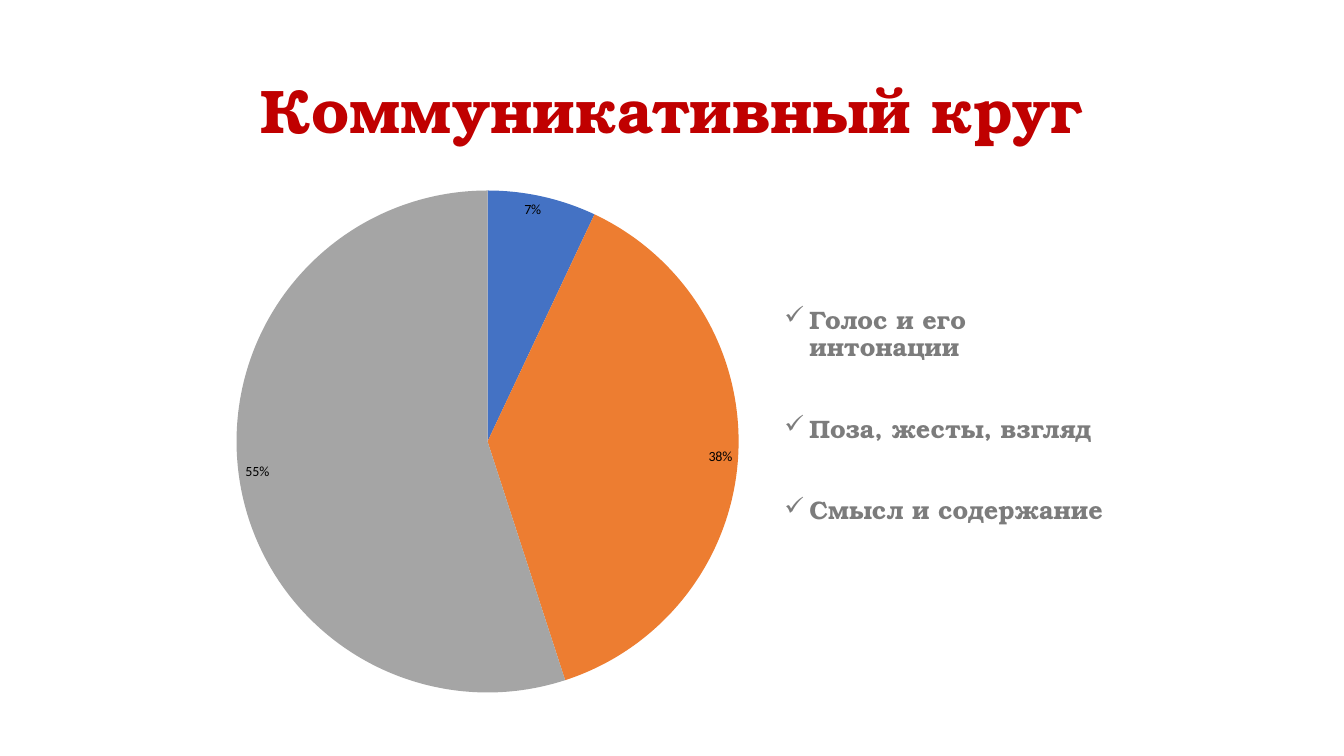
from lxml import etree
from pptx import Presentation
from pptx.chart.data import CategoryChartData
from pptx.dml.color import RGBColor
from pptx.enum import chart as ch, text
from pptx.oxml import ns, parse_xml
from pptx.util import Inches, Pt

COLORS = {"title": "C00000", "body": "7C7C7C", "label": "000000",
          "words": "4472C4", "voice": "ED7D31", "gesture": "A5A5A5"}
SERIF = "TeX Gyre Bonum"
POINTS = ["Голос и его интонации", "Поза, жесты, взгляд", "Смысл и содержание"]
SHARES = {"1": (0.07, "words"), "2": (0.38, "voice"), "3": (0.55, "gesture")}


def rgb(name):
    """Return the named palette colour."""
    return RGBColor.from_string(COLORS[name])


def set_bullet(p, char, indent):
    """Give a paragraph a hanging bullet."""
    pPr = p._p.get_or_add_pPr()
    pPr.set("marL", str(indent))
    pPr.set("indent", str(-indent))
    etree.SubElement(pPr, ns.qn("a:buChar")).set("char", char)


def add_text(s, lines, box, size, color, align=text.PP_ALIGN.LEFT,
             anchor=text.MSO_ANCHOR.TOP, gap=0, bullet=None):
    """Add a text box with one bold paragraph per line."""
    tf = s.shapes.add_textbox(*map(Inches, box)).text_frame
    tf.word_wrap = True
    tf.vertical_anchor = anchor
    for i, line in enumerate(lines):
        p = tf.add_paragraph() if i else tf.paragraphs[0]
        p.alignment = align
        p.line_spacing = 0.9
        p.space_before = Pt(gap if i else 0)
        if bullet:
            set_bullet(p, bullet, Inches(0.25))
        r = p.add_run()
        r.text = line
        r.font.name, r.font.size, r.font.bold = SERIF, Pt(size), True
        r.font.color.rgb = rgb(color)


def set_plot_area(chart, x, y, w, h):
    """Fix the inner plot area as fractions of the chart frame."""
    area = chart._chartSpace.chart.plotArea
    for old in area.findall(ns.qn("c:layout")):
        area.remove(old)
    area.insert(0, parse_xml(
        f'<c:layout {ns.nsdecls("c")}><c:manualLayout><c:layoutTarget val="inner"/>'
        '<c:xMode val="edge"/><c:yMode val="edge"/>'
        f'<c:x val="{x}"/><c:y val="{y}"/><c:w val="{w}"/><c:h val="{h}"/>'
        '</c:manualLayout></c:layout>'))


def add_pie(s, shares, box):
    """Add a pie chart with percentage labels inside its edge."""
    data = CategoryChartData(number_format="0%")
    data.categories = list(shares)
    data.add_series("Series 1", [value for value, _ in shares.values()])
    chart = s.shapes.add_chart(ch.XL_CHART_TYPE.PIE, *map(Inches, box), data).chart
    chart.has_legend = chart.has_title = False
    chart.font.name, chart.font.size = "Calibri", Pt(10)
    chart.font.color.rgb = rgb("label")
    set_plot_area(chart, 0.03, 0.07, 0.95, 0.85)
    plot = chart.plots[0]
    plot.vary_by_categories = True
    plot.has_data_labels = True
    labels = plot.data_labels
    labels.show_value, labels.show_percentage = True, False
    labels.number_format, labels.number_format_is_linked = "0%", False
    labels.position = ch.XL_LABEL_POSITION.INSIDE_END
    for i, (_, color) in enumerate(shares.values()):
        fill = plot.series[0].points[i].format.fill
        fill.solid()
        fill.fore_color.rgb = rgb(color)


def main():
    """Build the communication circle slide."""
    prs = Presentation()
    prs.slide_width, prs.slide_height = Inches(13.33), Inches(7.5)
    s = prs.slides.add_slide(prs.slide_layouts[6])
    add_text(s, ["Коммуникативный круг"], (0.92, 0.4, 11.5, 1.45), 44, "title",
             align=text.PP_ALIGN.CENTER, anchor=text.MSO_ANCHOR.MIDDLE)
    add_pie(s, SHARES, (2.17, 1.48, 5.28, 5.86))
    add_text(s, POINTS, (7.68, 3, 3.48, 3.7), 18, "body", gap=39, bullet="✓")
    prs.save("out.pptx")


if __name__ == "__main__":
    main()
